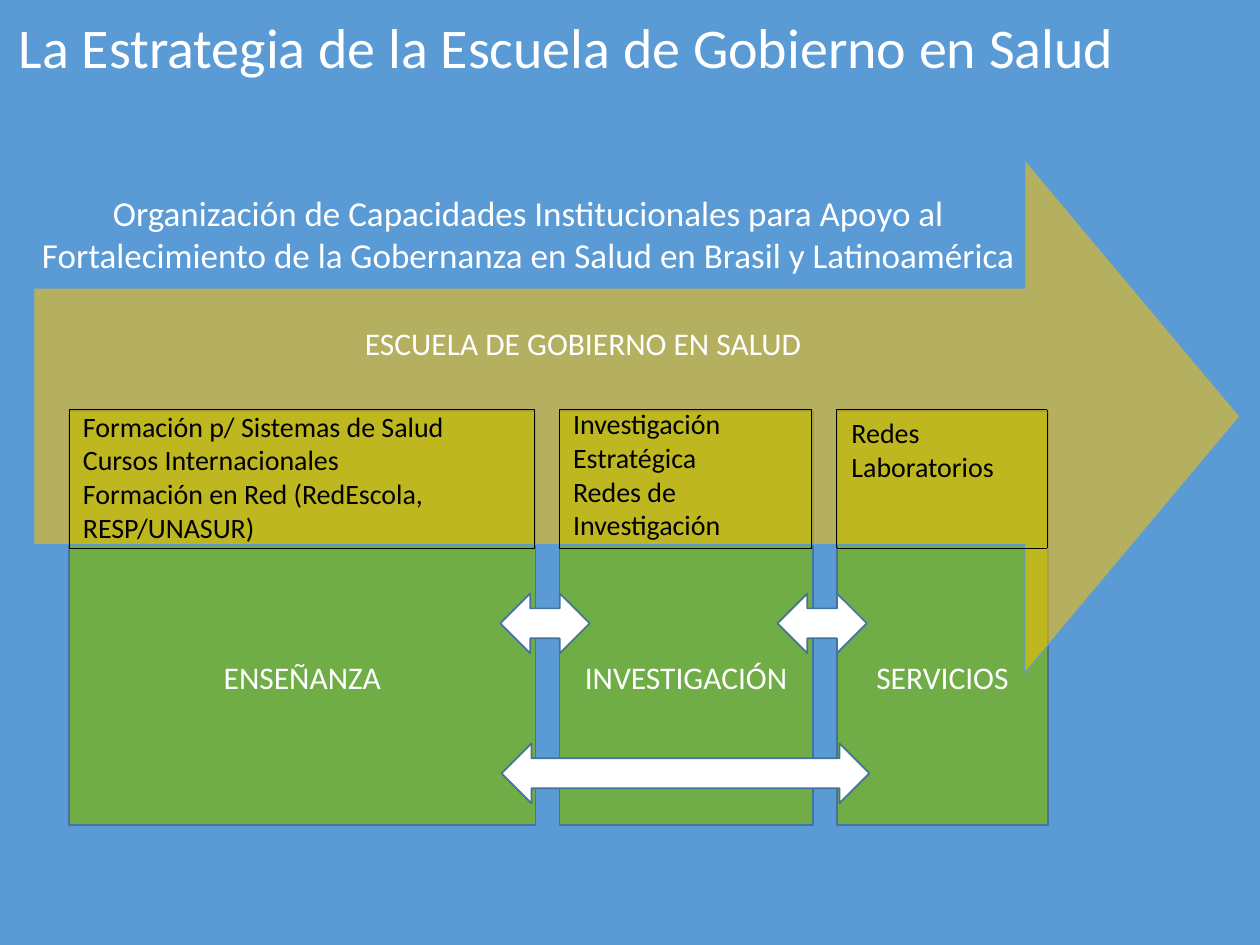
import pptx
import pptx.util
import pptx.dml.color
import pptx.enum.dml
import pptx.enum.shapes
import pptx.enum.text
from lxml import etree

RGB = pptx.dml.color.RGBColor
SHAPE = pptx.enum.shapes.MSO_SHAPE
ALIGN = pptx.enum.text.PP_ALIGN
ANCHOR = pptx.enum.text.MSO_ANCHOR
FIT = pptx.enum.text.MSO_AUTO_SIZE

BLUE = RGB(0x5B, 0x9B, 0xD5)
EDGE = RGB(0x43, 0x73, 0x9E)
GREEN = RGB(0x70, 0xAD, 0x47)
GOLD = RGB(0xFF, 0xC0, 0x00)
WHITE = RGB(0xFF, 0xFF, 0xFF)
BLACK = RGB(0x00, 0x00, 0x00)

# The slide is a grid of 100 columns by 75 rows
CELL = pptx.util.Inches(0.1)
GAP = 1.9
LEFT = 5.5

# Label, column width, notes, and the place of the notes (x, y, w, h)
AREAS = [
    ("ENSEÑANZA", 37,
     ["Formación p/ Sistemas de Salud", "Cursos Internacionales",
      "Formación en Red (RedEscola, RESP/UNASUR)"], (5.6, 32, 36.8, 11.8)),
    ("INVESTIGACIÓN", 20.1,
     ["Investigación Estratégica", "Redes de Investigación"],
     (44.5, 31.8, 20.9, 11.8)),
    ("SERVICIOS", 16.8, ["Redes Laboratorios"], (66.6, 32.5, 17.6, 6.4)),
]


def grid(*cells):
    return [round(cell * CELL) for cell in cells]


def apply(target, values):
    for name, value in values.items():
        setattr(target, name, value)


def write(shape, lines, size, color, align, frame):
    apply(shape.text_frame, {"word_wrap": True, **frame})
    shape.text_frame.text = "\n".join(lines)
    for para in shape.text_frame.paragraphs:
        para.alignment = align
        apply(para.runs[0].font, {"name": "Calibri", "size": pptx.util.Pt(size)})
        para.runs[0].font.color.rgb = color


def add_text(slide, box, lines, size, color, align=ALIGN.LEFT):
    text = slide.shapes.add_textbox(*grid(*box))
    write(text, lines, size, color, align, {"auto_size": FIT.SHAPE_TO_FIT_TEXT})


def add_form(slide, kind, box, fill=None, edge=EDGE, width=1):
    form = slide.shapes.add_shape(kind, *grid(*box))
    form.shadow.inherit = False
    if fill is None:
        form.fill.background()
    else:
        form.fill.solid()
        form.fill.fore_color.rgb = fill
    form.line.color.rgb = edge
    form.line.width = pptx.util.Pt(width)
    return form


def add_label(form, label, frame):
    write(form, [label], 18, WHITE, ALIGN.CENTER,
          {"vertical_anchor": ANCHOR.MIDDLE, **frame})


def set_alpha(form, share):
    color = form.fill._xPr.find(".//" + pptx.oxml.ns.qn("a:srgbClr"))
    alpha = etree.SubElement(color, pptx.oxml.ns.qn("a:alpha"))
    alpha.set("val", str(share * 1000))


def add_swap(slide, left, top, width):
    add_form(slide, SHAPE.LEFT_RIGHT_ARROW, (left, top, width, 4.75), WHITE)


def main():
    deck = pptx.Presentation()
    apply(deck, {"slide_width": 100 * CELL, "slide_height": 75 * CELL})
    slide = deck.slides.add_slide(deck.slide_layouts[6])
    slide.background.fill.solid()
    slide.background.fill.fore_color.rgb = BLUE

    # Green columns, with labels below the middle
    edges = []
    left = LEFT
    for label, width, _, _ in AREAS:
        form = add_form(slide, SHAPE.RECTANGLE, (left, 32.6, width, 32.9), GREEN)
        add_label(form, label, {"margin_top": round(9.8 * CELL)})
        edges.append(left)
        left += width + GAP

    # White arrows across the gaps
    for edge in edges[1:]:
        add_swap(slide, edge - 4.7, 47.1, 7.1)
    add_swap(slide, edges[1] - 4.6, 59, 29.2)

    # Large see-through arrow, with its label above the middle
    arrow = add_form(slide, SHAPE.RIGHT_ARROW, (2.7, 12.7, 95.7, 40.7),
                     GOLD, BLUE, 0.5)
    arrow.adjustments[1] = 0.419
    set_alpha(arrow, 55)
    add_label(arrow, "ESCUELA DE GOBIERNO EN SALUD",
              {"margin_bottom": round(12.2 * CELL)})

    # Notes in dotted frames
    for edge, (_, width, notes, box) in zip(edges, AREAS):
        add_text(slide, box, notes, 16, BLACK)
        frame = add_form(slide, SHAPE.RECTANGLE, (edge, 32.5, width - 0.1, 11),
                         None, BLACK, 0.25)
        frame.line.dash_style = pptx.enum.dml.MSO_LINE.ROUND_DOT

    # Title and aim
    add_text(slide, (0.5, 0.5, 93.2, 6.4),
             ["La Estrategia de la Escuela de Gobierno en Salud"], 32, WHITE)
    add_text(slide, (1.8, 14.7, 80.3, 7.7),
             ["Organización de Capacidades Institucionales para Apoyo al "
              "Fortalecimiento de la Gobernanza en Salud en Brasil y "
              "Latinoamérica"], 20, WHITE, ALIGN.CENTER)

    deck.save("out.pptx")


if __name__ == "__main__":
    main()
